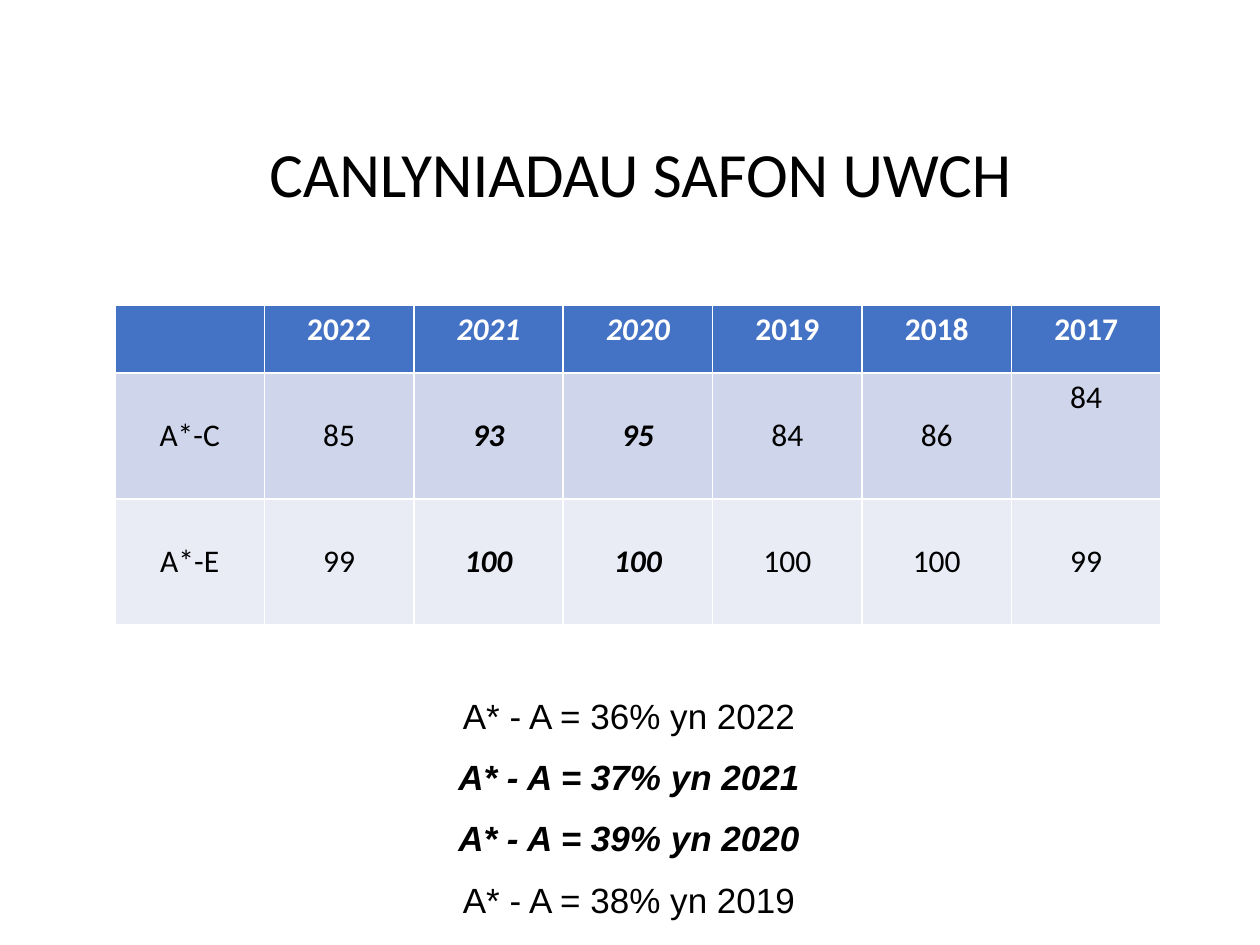
from pptx import Presentation
from pptx.dml.color import RGBColor
from pptx.enum.text import MSO_ANCHOR, PP_ALIGN
from pptx.util import Pt

CENTER = PP_ALIGN.CENTER
MIDDLE = MSO_ANCHOR.MIDDLE
TOP = MSO_ANCHOR.TOP

BLACK = RGBColor(0x00, 0x00, 0x00)
WHITE = RGBColor(0xFF, 0xFF, 0xFF)
HEADER_BLUE = RGBColor(0x44, 0x72, 0xC4)
BAND_DARK = RGBColor(0xCF, 0xD5, 0xEA)
BAND_LIGHT = RGBColor(0xE9, 0xEB, 0xF5)

ROWS = [
    ["", "2022", "2021", "2020", "2019", "2018", "2017"],
    ["A*-C", "85", "93", "95", "84", "86", "84"],
    ["A*-E", "99", "100", "100", "100", "100", "99"],
]
ROW_FILLS = [HEADER_BLUE, BAND_DARK, BAND_LIGHT]
ROW_HEIGHTS = [68, 126, 126]
EMPHASIZED_YEARS = {"2021", "2020"}
TOP_GRADES = {"2022": 36, "2021": 37, "2020": 39, "2019": 38}


def px(length):
    return round(length * 914400 / 126)


def apply_format(target, values):
    for name, value in values.items():
        setattr(target, name, value)


def write_paragraph(para, text, color=BLACK, **font_values):
    para.alignment = CENTER
    span = para.add_run()
    span.text = text
    apply_format(span.font, font_values)
    span.font.color.rgb = color


def add_text_frame(page, left, top, width, height, **frame_values):
    box = page.shapes.add_textbox(px(left), px(top), px(width), px(height))
    frame = box.text_frame
    apply_format(frame, {"word_wrap": True, **frame_values})
    return frame


def add_title(page):
    frame = add_text_frame(page, 35, 117, 1211, 157,
                           vertical_anchor=MIDDLE, margin_bottom=px(43))
    para = frame.paragraphs[0]
    para.line_spacing = 0.9
    write_paragraph(para, "CANLYNIADAU SAFON UWCH", name="Calibri", size=Pt(36))


def add_results_table(page):
    table = page.shapes.add_table(len(ROWS), len(ROWS[0]), px(115), px(305),
                                  px(1046), px(sum(ROW_HEIGHTS))).table
    for row_index, texts in enumerate(ROWS):
        table.rows[row_index].height = px(ROW_HEIGHTS[row_index])
        is_header = row_index == 0
        for column_index, text in enumerate(texts):
            cell = table.cell(row_index, column_index)
            raised = is_header or (row_index == 1 and ROWS[0][column_index] == "2017")
            apply_format(cell, {"vertical_anchor": TOP,
                                "margin_top": px(6 if raised else 44)})
            cell.fill.solid()
            cell.fill.fore_color.rgb = ROW_FILLS[row_index]
            if text:
                emphasized = ROWS[0][column_index] in EMPHASIZED_YEARS
                write_paragraph(cell.text_frame.paragraphs[0], text,
                                WHITE if is_header else BLACK,
                                name="Calibri", size=Pt(18),
                                bold=is_header or emphasized, italic=emphasized)


def add_top_grades(page):
    frame = add_text_frame(page, 98, 688, 1062, 310)
    for index, (year, percent) in enumerate(TOP_GRADES.items()):
        para = frame.add_paragraph() if index else frame.paragraphs[0]
        if index:
            para.space_before = Pt(11)
        emphasized = year in EMPHASIZED_YEARS
        write_paragraph(para, f"A* - A = {percent}% yn {year}", name="Arial",
                        size=Pt(20), bold=emphasized, italic=emphasized)


def main():
    deck = Presentation()
    apply_format(deck, {"slide_width": px(1260), "slide_height": px(945)})
    page = deck.slides.add_slide(deck.slide_layouts[6])
    add_title(page)
    add_top_grades(page)
    add_results_table(page)
    deck.save("out.pptx")


if __name__ == "__main__":
    main()
